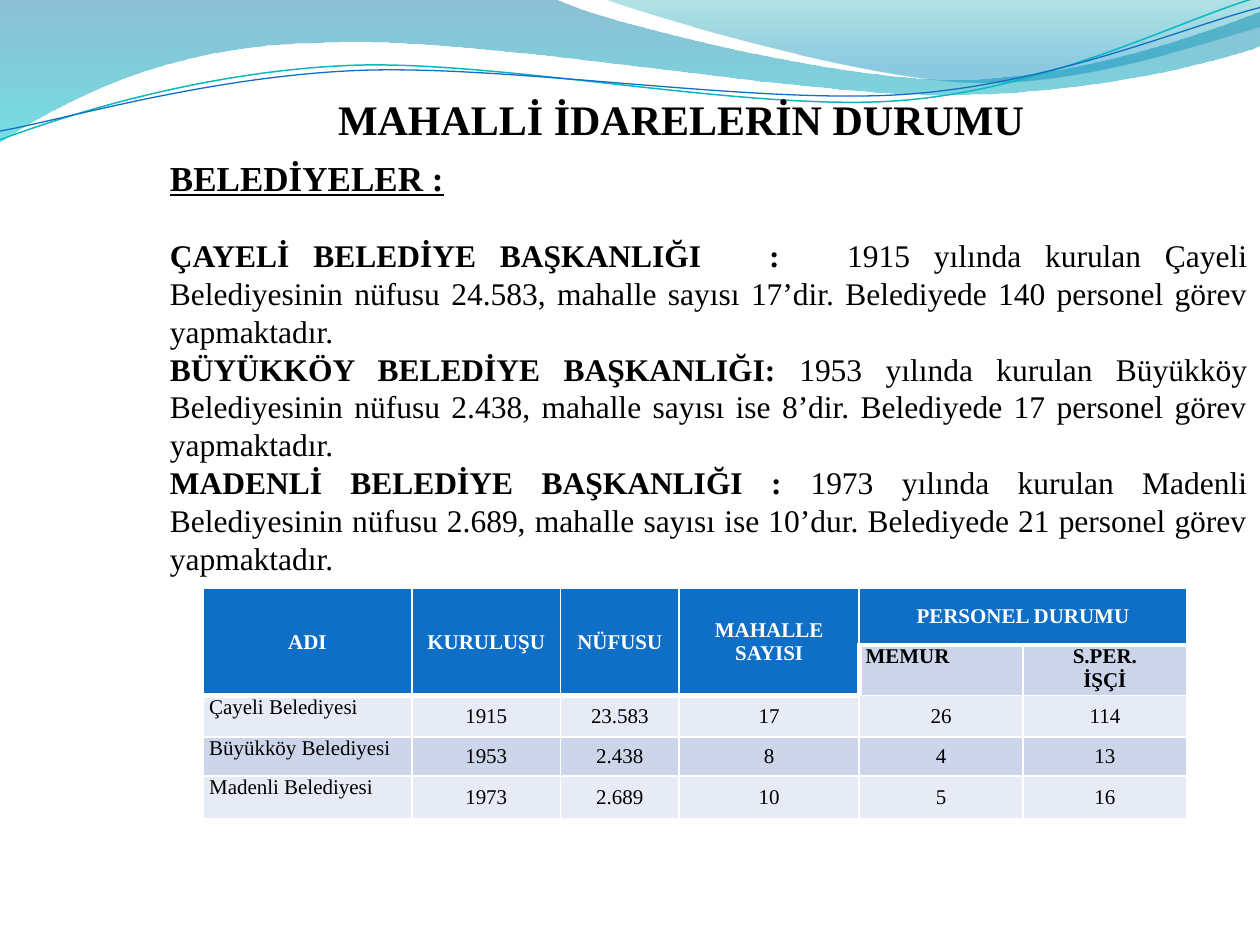
"""Build the slide on the state of the municipalities."""
import pptx
import pptx.dml.color
import pptx.enum.text
import pptx.oxml.ns
import pptx.util
from lxml import etree
from dataclasses import dataclass

Inches, Pt = pptx.util.Inches, pptx.util.Pt
RGB = pptx.dml.color.RGBColor.from_string
Align, Anchor = pptx.enum.text.PP_ALIGN, pptx.enum.text.MSO_ANCHOR
qn = pptx.oxml.ns.qn


@dataclass
class Theme:
    """Hold the colours, the typeface and the type sizes."""
    face: str = "Times New Roman"
    ink: str = "000000"
    pale: str = "FFFFFF"
    head: str = "0F6FC6"
    bands: tuple = ("CCD5EA", "E7EBF5")
    title: int = 24
    lead: int = 20
    body: int = 18
    cell: int = 12


T = Theme()
TITLE = "MAHALLİ İDARELERİN DURUMU"
LEAD = "BELEDİYELER :"
BODY = [
    ("ÇAYELİ BELEDİYE BAŞKANLIĞI", " :", " 1915 yılında kurulan Çayeli Belediyesinin nüfusu 24.583, "
     "mahalle sayısı 17’dir. Belediyede 140 personel görev yapmaktadır."),
    ("BÜYÜKKÖY BELEDİYE BAŞKANLIĞI:", "", " 1953 yılında kurulan Büyükköy Belediyesinin nüfusu 2.438, "
     "mahalle sayısı ise 8’dir. Belediyede 17 personel görev yapmaktadır."),
    ("MADENLİ BELEDİYE BAŞKANLIĞI :", "", " 1973 yılında kurulan Madenli Belediyesinin nüfusu 2.689, "
     "mahalle sayısı ise 10’dur. Belediyede 21 personel görev yapmaktadır."),
]
ROWS = [
    ["ADI", "KURULUŞU", "NÜFUSU", "MAHALLE SAYISI", "PERSONEL DURUMU", ""],
    ["", "", "", "", "MEMUR", "S.PER.\nİŞÇİ"],
    ["Çayeli Belediyesi", "1915", "23.583", "17", "26", "114"],
    ["Büyükköy Belediyesi", "1953", "2.438", "8", "4", "13"],
    ["Madenli Belediyesi", "1973", "2.689", "10", "5", "16"],
]
WIDE = [1.66, 1.18, 0.94, 1.43, 1.3, 1.3]
HIGH = [0.45, 0.31, 0.33, 0.31, 0.34]
SPANS = [((0, c), (1, c)) for c in range(4)] + [((0, 4), (0, 5))]
FILLS = [
    ([(0, -0.01), (4.4, -0.01), (4.76, 0.17, 6.64, 0.63, 7.58, 0.63), (8.53, 0.63, 9.58, 0.26, 10, 0.09),
      (10.01, 0.36), (9.83, 0.44, 8.7, 0.76, 7.46, 0.75), (6.22, 0.75, 3.82, 0.28, 2.57, 0.34),
      (1.29, 0.35, 0.46, 0.83, -0.01, 1.13), (0, -0.01)], [(0, "0074A1", 45), (1, "00C6CF", 55)]),
    ([(4.79, -0.01), (5.09, 0.11, 6.82, 0.62, 7.69, 0.65), (8.56, 0.69, 9.61, 0.32, 10, 0.21), (10, 0),
      (4.79, -0.01)], [(0, "00A1A9", 30), (0.8, "008BBF", 45)]),
]
LINES = [
    ([(0, 1.11), (0.48, 0.93, 1.58, 0.57, 2.77, 0.52), (3.95, 0.47, 5.93, 0.89, 7.13, 0.8),
      (8.33, 0.71, 9.38, 0.15, 9.98, -0.02)], "0AB8BF", 0.85),
    ([(0, 1.04), (0.47, 0.96, 1.64, 0.61, 2.83, 0.56), (4.03, 0.51, 5.97, 0.83, 7.17, 0.75),
      (8.36, 0.67, 9.41, 0.21, 10, 0.06)], "0F6FC6", 0.75),
]


def wave(slide, path, close):
    """Draw an outline of lines and cubic curves and return its shape."""
    segs = [[Inches(v) for v in seg] for seg in path]
    ends = [seg[-2:] for seg in segs]
    pen = slide.shapes.build_freeform(*ends[0])
    pen.add_line_segments(ends[1:], close=close)
    shape = pen.convert_to_shape()
    shape.shadow.inherit = False
    left, top = (min(axis) for axis in zip(*ends))
    for step, seg in zip(list(shape.element.iter(qn("a:lnTo"))), segs[1:]):
        if len(seg) == 6:
            curve = etree.Element(qn("a:cubicBezTo"))
            for x, y in zip(seg[::2], seg[1::2]):
                etree.SubElement(curve, qn("a:pt"), x=str(x - left), y=str(y - top))
            step.getparent().replace(step, curve)
    return shape


def waves(slide):
    """Draw the tinted waves and the thin lines over them."""
    for path, stops in FILLS:
        shape = wave(slide, path, True)
        shape.line.fill.background()
        shape.fill.gradient()
        shape.fill.gradient_angle = 270
        for stop, (pos, color, alpha) in zip(shape.fill.gradient_stops, stops):
            stop.position = pos
            stop.color.rgb = RGB(color)
        for tint, stop in zip(shape.element.iter(qn("a:srgbClr")), stops):
            etree.SubElement(tint, qn("a:alpha")).set("val", str(stop[2] * 1000))
    for path, color, width in LINES:
        shape = wave(slide, path, False)
        shape.fill.background()
        shape.line.color.rgb = RGB(color)
        shape.line.width = Pt(width)


def style(par, size, bold=None, color=T.ink, align=None):
    """Set the font and the alignment of a paragraph."""
    par.alignment = align
    font = par.font
    font.name, font.size, font.bold = T.face, Pt(size), bold
    font.color.rgb = RGB(color)


def frame(slide, *place):
    """Add a wrapping text box and return its text frame."""
    text = slide.shapes.add_textbox(*map(Inches, place)).text_frame
    text.word_wrap = True
    return text


def words(slide):
    """Write the title, the lead and the body."""
    text = frame(slide, 2.63, 0.59, 5.55, 0.55)
    text.margin_left = text.margin_right = text.margin_bottom = 0
    text.vertical_anchor = Anchor.BOTTOM
    text.text = TITLE
    style(text.paragraphs[0], T.title, True, align=Align.CENTER)

    text = frame(slide, 1.25, 1.19, 8.75, 3.78)
    text.text = LEAD
    style(text.paragraphs[0], T.lead, True)
    text.paragraphs[0].font.underline = True
    for i, (name, colon, rest) in enumerate(BODY):
        par = text.add_paragraph()
        par.space_before = Pt(0 if i else 21.7)
        style(par, T.body, align=Align.JUSTIFY)
        for part in filter(None, (name, colon, rest)):
            run = par.add_run()
            run.text = part
            run.font.bold = part != rest
            if part == colon:
                run.font._element.set("spc", "2500")


def edge(cell, side, width):
    """Draw one border of a cell."""
    line = etree.SubElement(cell._tc.get_or_add_tcPr(), qn("a:" + side), w=str(Pt(width)))
    fill = etree.SubElement(line, qn("a:solidFill"))
    etree.SubElement(fill, qn("a:srgbClr"), val=T.pale)


def grid(slide):
    """Add the table of municipalities."""
    place = map(Inches, (1.61, 4.67, sum(WIDE), sum(HIGH)))
    table = slide.shapes.add_table(len(ROWS), len(WIDE), *place).table
    for col, width in zip(table.columns, WIDE):
        col.width = Inches(width)
    for row, height in zip(table.rows, HIGH):
        row.height = Inches(height)
    for r, row in enumerate(ROWS):
        for c, label in enumerate(row):
            cell = table.cell(r, c)
            head = r == 0 or r == 1 and c < 4
            thick = {"lnL": (r, c) == (1, 4), "lnR": (r, c) == (1, 3),
                     "lnT": r == 1 and c > 3 or r == 2 and c < 4,
                     "lnB": head}
            for side, heavy in thick.items():
                edge(cell, side, 3 if heavy else 1)
            cell.fill.solid()
            cell.fill.fore_color.rgb = RGB(T.head if head else T.bands[(r + 1) % 2])
            cell.margin_left = cell.margin_right = Inches(0.05)
            cell.margin_top = cell.margin_bottom = 0
            top = r == 1 and c > 3 or r > 1 and c == 0
            cell.vertical_anchor = Anchor.TOP if top else Anchor.MIDDLE
            align = Align.JUSTIFY if r > 1 and c == 0 else Align.LEFT if (r, c) == (1, 4) else Align.CENTER
            cell.text = label
            for par in cell.text_frame.paragraphs:
                style(par, T.cell, r < 2, T.pale if head else T.ink, align)
    for start, end in SPANS:
        table.cell(*start).merge(table.cell(*end))


def main():
    """Build and save the deck."""
    deck = pptx.Presentation()
    deck.slide_width, deck.slide_height = Inches(10), Inches(7.5)
    slide = deck.slides.add_slide(deck.slide_layouts[6])
    waves(slide)
    words(slide)
    grid(slide)
    deck.save("out.pptx")


if __name__ == "__main__":
    main()
